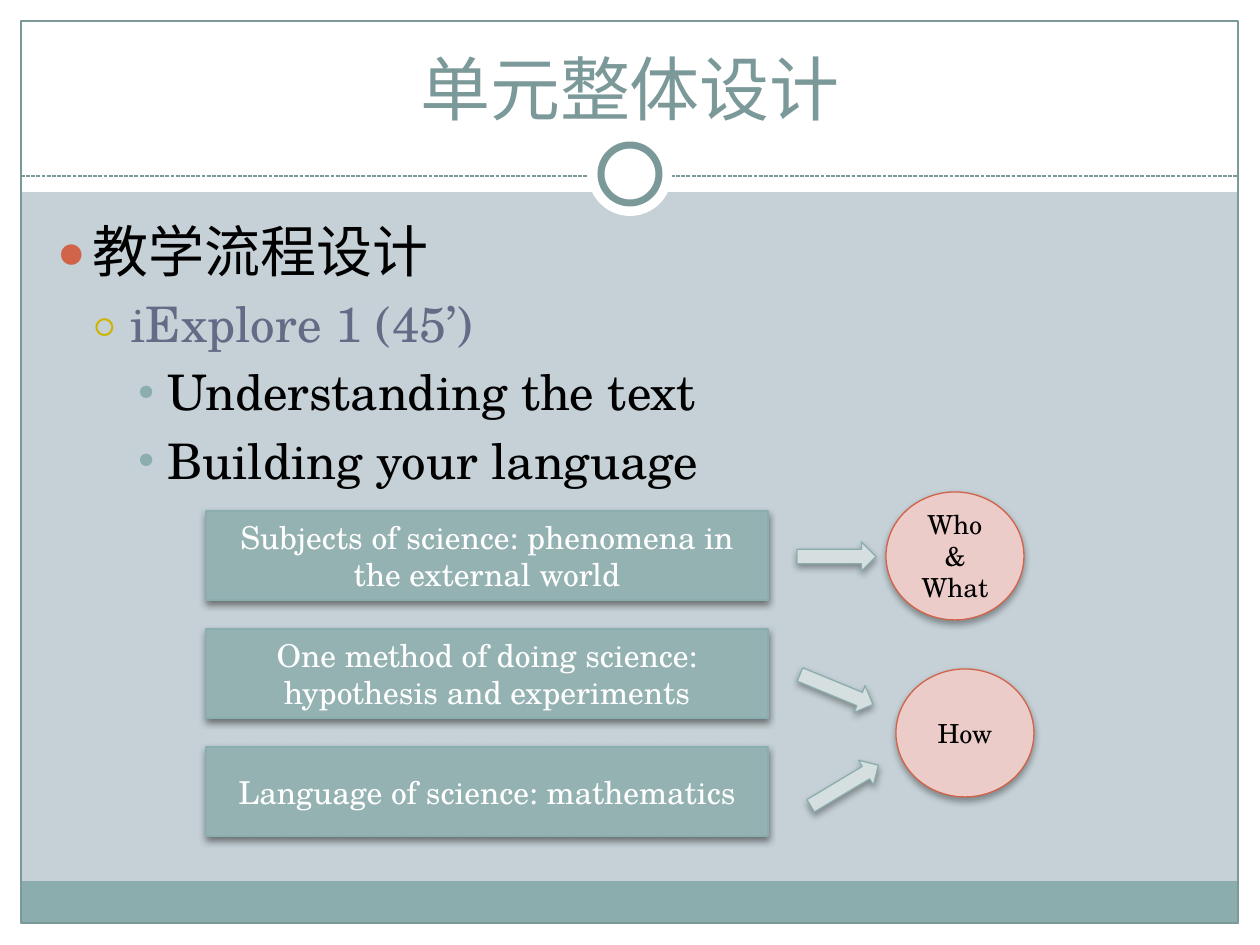
"""Build the unit design slide: teaching flow with three topics leading to two questions."""
import lxml.etree
import pptx
import pptx.dml.color
import pptx.enum.dml
import pptx.enum.shapes
import pptx.enum.text
import pptx.oxml.ns
import pptx.util

PX = 914400 / 126
SHAPE = pptx.enum.shapes.MSO_SHAPE
ANCHOR = pptx.enum.text.MSO_ANCHOR
CENTER = pptx.enum.text.PP_ALIGN.CENTER
qn = pptx.oxml.ns.qn
THEME = {
    "font": "TeX Gyre Schola",
    "back": "C5D1D7", "paper": "FFFFFF", "ink": "000000", "frame": "7C999A",
    "teal": "8CADAE", "topic": "95B2B3", "arrow": "D5DFDF",
    "red": "D16349", "pink": "ECCCC9", "gold": "CCB400", "slate": "646B86",
    "title": 40, "heading": 32, "item": 28, "topic_text": 18, "question_text": 15,
}


def draw(kind, box, fill=None, line=None, weight=0.75, shadow=0):
    """Add a preset shape at a px box, with a shadow of the given opacity percent."""
    shape = slide.shapes.add_shape(kind, *[round(v * PX) for v in box])
    shape.shadow.inherit = False
    for part, colour in ((shape.fill, fill), (shape.line.fill, line)):
        if colour:
            part.solid()
            part.fore_color.rgb = pptx.dml.color.RGBColor.from_string(THEME[colour])
        else:
            part.background()
    if line:
        shape.line.width = pptx.util.Pt(weight)
    if shadow:
        effects = shape.element.spPr.find(qn("a:effectLst"))
        outer = lxml.etree.SubElement(effects, qn("a:outerShdw"), blurRad="50800",
                                      dist="25400", dir="5400000", rotWithShape="0")
        black = lxml.etree.SubElement(outer, qn("a:srgbClr"), val=THEME["ink"])
        lxml.etree.SubElement(black, qn("a:alpha"), val=str(shadow * 1000))
    return shape


def write(frame, lines, size, colour, anchor=ANCHOR.MIDDLE, align=CENTER):
    """Fill a text frame with one paragraph per line in one style."""
    frame.text = "\n".join(lines)
    frame.word_wrap = True
    frame.vertical_anchor = anchor
    for paragraph in frame.paragraphs:
        paragraph.alignment = align
        style = {"name": THEME["font"], "size": pptx.util.Pt(THEME[size])}
        for key, value in style.items():
            setattr(paragraph.font, key, value)
        paragraph.font.color.rgb = pptx.dml.color.RGBColor.from_string(THEME[colour])


deck = pptx.Presentation()
deck.slide_width, deck.slide_height = round(1260 * PX), round(945 * PX)
slide = deck.slides.add_slide(deck.slide_layouts[5])
slide.background.fill.solid()
slide.background.fill.fore_color.rgb = pptx.dml.color.RGBColor.from_string(THEME["back"])

for margin in ((0, 924, 1260, 21), (0, 0, 1260, 192), (0, 0, 21, 945), (1239, 0, 21, 945)):
    draw(SHAPE.RECTANGLE, margin, "paper")
draw(SHAPE.RECTANGLE, (21, 881, 1217, 43), "teal")
draw(SHAPE.RECTANGLE, (21, 21, 1217, 902), line="frame")

divider = slide.shapes.add_connector(pptx.enum.shapes.MSO_CONNECTOR.STRAIGHT,
                                     *[round(v * PX) for v in (21, 176, 1239, 176)])
divider.line.color.rgb = pptx.dml.color.RGBColor.from_string(THEME["frame"])
divider.line.width = pptx.util.Pt(0.75)
divider.line.dash_style = pptx.enum.dml.MSO_LINE.SQUARE_DOT
lxml.etree.SubElement(divider.element.spPr, qn("a:effectLst"))

draw(SHAPE.OVAL, (588, 132, 84, 84), "paper")
draw(SHAPE.OVAL, (601, 145, 58, 58), "paper", "frame", 4)

title = slide.shapes.title
title.element.getparent().append(title.element)
place = {"left": 42, "top": 32, "width": 1176, "height": 104}
for side, length in place.items():
    setattr(title, side, round(length * PX))
write(title.text_frame, ["单元整体设计"], "title", "frame", ANCHOR.BOTTOM)
title.text_frame.auto_size = pptx.enum.text.MSO_AUTO_SIZE.NONE

outline = slide.shapes.add_textbox(*[round(v * PX) for v in (42, 210, 1172, 311)])
levels = [
    ("教学流程设计", 0, "heading", "ink", "●", "red", 85, 38, 38),
    ("iExplore 1 (45’)", 1, "item", "slate", "○", "gold", 70, 76, 38),
    ("Understanding the text", 2, "item", "ink", "•", "teal", 75, 113, 32),
    ("Building your language", 2, "item", "ink", "•", "teal", 75, 113, 32),
]
write(outline.text_frame, [level[0] for level in levels], "item", "ink", ANCHOR.TOP, None)
for entry, level in zip(outline.text_frame.paragraphs, levels):
    _, depth, size, colour, bullet, bullet_colour, percent, indent, hanging = level
    entry.level = depth
    entry.font.size = pptx.util.Pt(THEME[size])
    entry.font.color.rgb = pptx.dml.color.RGBColor.from_string(THEME[colour])
    entry.space_before = pptx.util.Pt(THEME[size] * 0.2)
    props = entry._p.get_or_add_pPr()
    props.set("marL", str(round(indent * PX)))
    props.set("indent", str(round(-hanging * PX)))
    marks = [
        lxml.etree.Element(qn("a:buClr")),
        lxml.etree.Element(qn("a:buSzPct"), val=str(percent * 1000)),
        lxml.etree.Element(qn("a:buFont"), typeface=THEME["font"]),
        lxml.etree.Element(qn("a:buChar"), char=bullet),
    ]
    lxml.etree.SubElement(marks[0], qn("a:srgbClr"), val=THEME[bullet_colour])
    after_spacing = props.index(props.find(qn("a:spcBef"))) + 1
    for offset, mark in enumerate(marks):
        props.insert(after_spacing + offset, mark)

topics = [
    "Subjects of science: phenomena in the external world",
    "One method of doing science: hypothesis and experiments",
    "Language of science: mathematics",
]
for row, topic in enumerate(topics):
    panel = draw(SHAPE.RECTANGLE, (206, 511 + 118 * row, 562, 89), "topic", "teal", shadow=45)
    write(panel.text_frame, [topic], "topic_text", "paper")

for left, top, words in ((886, 492, ["Who", "&", "What"]), (896, 669, ["How"])):
    question = draw(SHAPE.OVAL, (left, top, 138, 128), "pink", "red", shadow=35)
    write(question.text_frame, words, "question_text", "ink")

for left, top, angle in ((797, 542, 0), (797, 675, 22.4), (805, 771, 329.1)):
    arrow = draw(SHAPE.RIGHT_ARROW, (left, top, 79, 29), "arrow", "teal", shadow=35)
    arrow.rotation = angle

deck.save("out.pptx")
